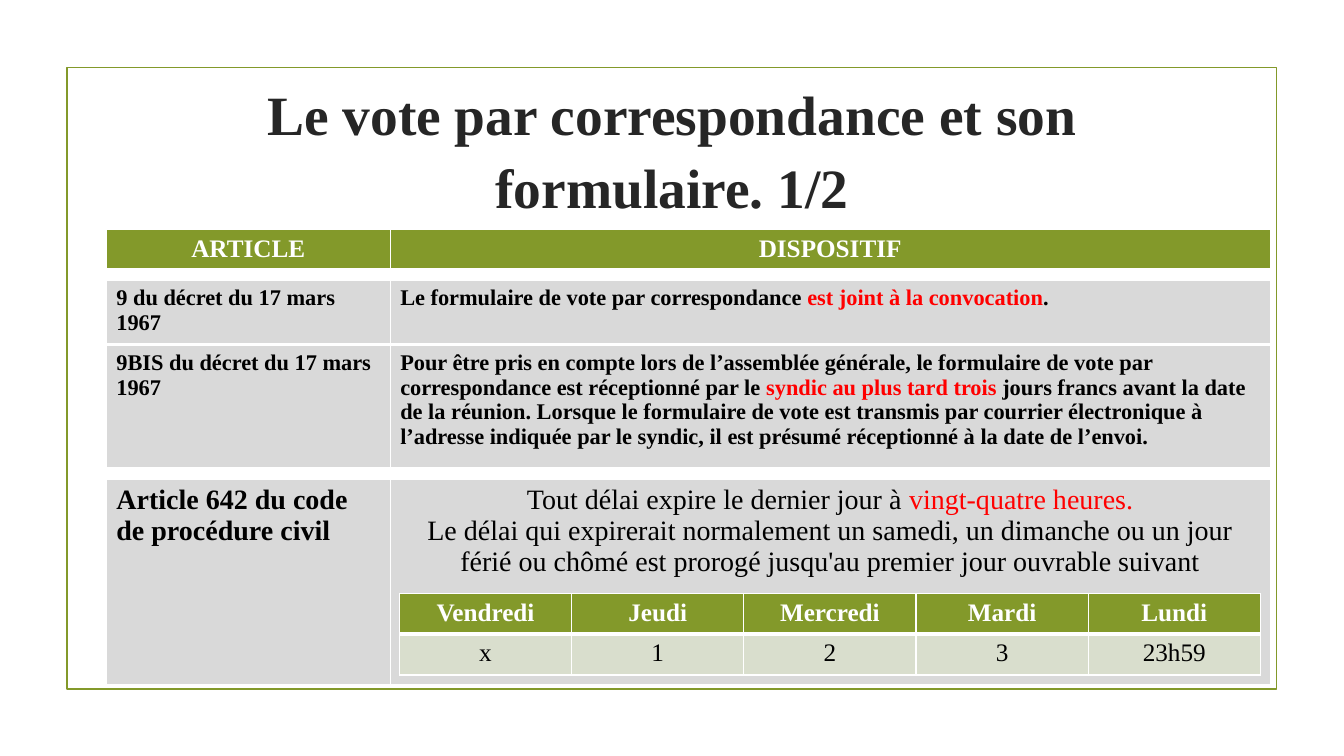
from pptx import Presentation
from pptx.dml.color import RGBColor
from pptx.enum.shapes import MSO_SHAPE
from pptx.enum.text import MSO_ANCHOR, PP_ALIGN
from pptx.oxml import parse_xml
from pptx.oxml.ns import nsdecls
from pptx.util import Pt

GREEN = RGBColor(0x83, 0x99, 0x2A)
PALE_GREEN = RGBColor(0xD9, 0xDE, 0xCD)
GREY = RGBColor(0xD9, 0xD9, 0xD9)
CHARCOAL = RGBColor(0x26, 0x26, 0x26)
BLACK = RGBColor(0, 0, 0)
WHITE = RGBColor(0xFF, 0xFF, 0xFF)
RED = RGBColor(0xFF, 0, 0)
FONT = "Times New Roman"
LEFT, CENTER = PP_ALIGN.LEFT, PP_ALIGN.CENTER


def write(paragraph, runs, size, bold, align):
    paragraph.alignment = align
    for text, color in runs:
        run = paragraph.add_run()
        run.text = text
        run.font.name = FONT
        run.font.size = Pt(size)
        run.font.bold = bold
        run.font.color.rgb = color


def style_cell(cell, fill, bottom_width):
    properties = cell._tc.get_or_add_tcPr()
    borders = [("lnL", 1), ("lnR", 1), ("lnT", 1), ("lnB", bottom_width)]
    for index, (side, width) in enumerate(borders):
        properties.insert(index, parse_xml(
            f'<a:{side} {nsdecls("a")} w="{Pt(width)}"><a:solidFill>'
            f'<a:srgbClr val="{WHITE}"/></a:solidFill></a:{side}>'))
    cell.fill.solid()
    cell.fill.fore_color.rgb = fill


presentation = Presentation()
presentation.slide_width = Pt(960)
presentation.slide_height = Pt(540)
slide = presentation.slides.add_slide(presentation.slide_layouts[6])

frame = slide.shapes.add_shape(MSO_SHAPE.RECTANGLE, Pt(47.8), Pt(48.2), Pt(864), Pt(444))
frame.shadow.inherit = False
frame.fill.background()
frame.line.color.rgb = GREEN
frame.line.width = Pt(1.25)

title = slide.shapes.add_textbox(Pt(102), Pt(53.3), Pt(756), Pt(103))
title.text_frame.word_wrap = True
title.text_frame.vertical_anchor = MSO_ANCHOR.MIDDLE
title_paragraph = title.text_frame.paragraphs[0]
title_paragraph.line_spacing = 1.09
write(title_paragraph, [("Le vote par correspondance et son formulaire. 1/2", CHARCOAL)],
      39.6, True, CENTER)

article_rows = [
    (164.2, 27.5, GREEN, 18, True, CENTER, [("ARTICLE", WHITE)],
     [[("DISPOSITIF", WHITE)]]),
    (200.4, 42, GREY, 16, True, LEFT, [("9 du décret du 17 mars 1967", BLACK)],
     [[("Le formulaire de vote par correspondance ", BLACK),
       ("est joint à la convocation", RED), (".", BLACK)]]),
    (246.5, 88.2, GREY, 16, True, LEFT, [("9BIS du décret du 17 mars 1967", BLACK)],
     [[("Pour être pris en compte lors de l’assemblée générale, le formulaire de vote "
        "par correspondance est réceptionné par le ", BLACK),
       ("syndic au plus tard trois ", RED),
       ("jours francs avant la date de la réunion. Lorsque le formulaire de vote est "
        "transmis par courrier électronique à l’adresse indiquée par le syndic, il est "
        "présumé réceptionné à la date de l’envoi.", BLACK)]]),
    (342.2, 148, GREY, 20, False, CENTER,
     [("Article 642 du code de procédure civil", BLACK)],
     [[("Tout délai expire le dernier jour à ", BLACK), ("vingt-quatre heures.", RED)],
      [("Le délai qui expirerait normalement un samedi, un dimanche ou un jour férié ou "
        "chômé est prorogé jusqu'au premier jour ouvrable suivant", BLACK)]]),
]
for top, height, fill, size, bold, align, article, provisions in article_rows:
    table = slide.shapes.add_table(1, 2, Pt(75.9), Pt(top), Pt(831.4), Pt(height)).table
    table.first_row = table.horz_banding = False
    table.columns[0].width = Pt(202.8)
    table.columns[1].width = Pt(628.6)
    article_cell, provision_cell = table.rows[0].cells
    for cell in (article_cell, provision_cell):
        style_cell(cell, fill, 3)
    article_align = CENTER if fill == GREEN else LEFT
    write(article_cell.text_frame.paragraphs[0], article, size, True, article_align)
    text_frame = provision_cell.text_frame
    for index, runs in enumerate(provisions):
        paragraph = text_frame.add_paragraph() if index else text_frame.paragraphs[0]
        write(paragraph, runs, size, bold, align)

countdown = [("Vendredi", "x"), ("Jeudi", "1"), ("Mercredi", "2"),
             ("Mardi", "3"), ("Lundi", "23h59")]
days = slide.shapes.add_table(2, 5, Pt(285.3), Pt(424), Pt(615), Pt(56.4)).table
days.first_row = days.horz_banding = False
days.rows[0].height = Pt(27.1)
days.rows[1].height = Pt(29.3)
for column, (day, count) in enumerate(countdown):
    days.columns[column].width = Pt(123)
    day_cell, count_cell = days.cell(0, column), days.cell(1, column)
    style_cell(day_cell, GREEN, 3)
    style_cell(count_cell, PALE_GREEN, 1)
    write(day_cell.text_frame.paragraphs[0], [(day, WHITE)], 18, True, CENTER)
    write(count_cell.text_frame.paragraphs[0], [(count, BLACK)], 18, False, CENTER)

presentation.save("out.pptx")
